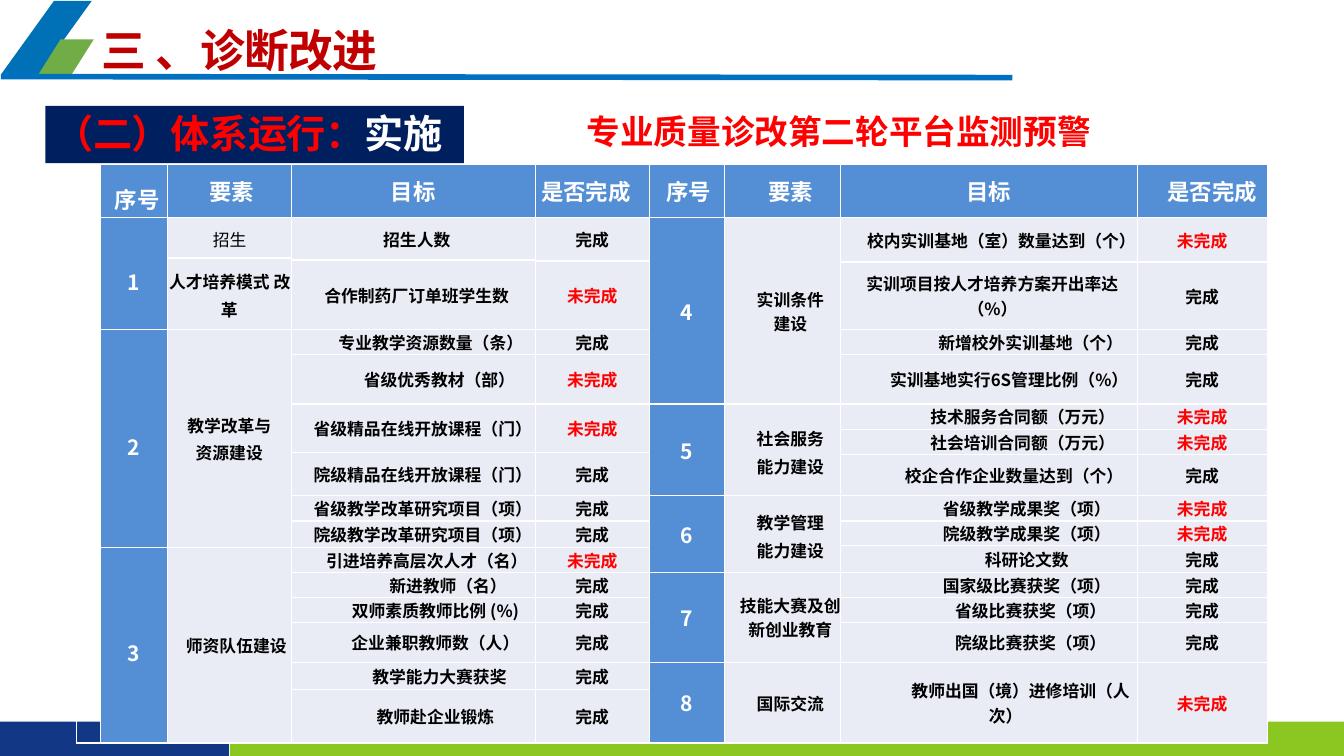
from dataclasses import dataclass

from lxml.etree import SubElement
from pptx import Presentation
from pptx.dml.color import RGBColor
from pptx.enum.shapes import MSO_CONNECTOR, MSO_SHAPE
from pptx.enum.text import MSO_ANCHOR, PP_ALIGN
from pptx.oxml.ns import qn
from pptx.util import Inches, Pt


@dataclass(frozen=True)
class Theme:
    """Colours, font and type sizes of the slide."""
    font: str = "Noto Sans CJK SC"
    white: str = "FFFFFF"
    black: str = "000000"
    red: str = "FF0000"
    title_red: str = "C00000"
    navy: str = "001F5F"
    logo_blue: str = "0071B7"
    logo_green: str = "70AD47"
    rule_blue: str = "0070C0"
    bar_green: str = "8CC721"
    bar_blue: str = "123885"
    head_fill: str = "548ED4"
    body_fill: str = "E9ECF4"
    title: int = 32
    section: int = 28
    subtitle: int = 24
    head: int = 16
    number: int = 15
    body: int = 12


THEME = Theme()
COLUMNS = [0.23, 0.66, 1.23, 2.42, 1.13, 0.75, 1.15, 2.94, 1.29]
ROWS = [0.53, 0.4, 0.02, 0.01, 0.01, 0.67, 0.25, 0.49, 0.25, 0.23, 0.02,
        0.41, 0.25, 0.24, 0.02, 0.25, 0.25, 0.24, 0.4, 0.27, 0.53]
HEADINGS = [("序号", dict(left=0.14, spacing=1.5)), ("要素", dict(left=0.42)),
            ("目标", dict(align=PP_ALIGN.CENTER)), ("是否完成", dict(left=0.06)),
            ("序号", dict(left=0.17)), ("要素", dict(left=0.43)),
            ("目标", dict(align=PP_ALIGN.CENTER)), ("是否完成", dict(left=0.3))]
HANGING = dict(left=0.48, first=-0.33, spacing=1.15)
LEFT_ELEMENTS = [
    (1, "招生", dict(first=0.01, spacing=1.15, bold=False)),
    (2, "人才培养模式 改革", dict(first=0.01, spacing=1.15)),
    (6, "教学改革与\n资源建设", dict(before=2.1)),
    (15, "师资队伍建设", dict(left=0.14)),
]
RIGHT_ELEMENTS = [
    (1, "实训条件\n建设", dict(left=0.15)),
    (8, "社会服务\n能力建设", HANGING),
    (12, "教学管理\n能力建设", HANGING),
    (16, "技能大赛及创新创业教育", dict(left=0.15)),
    (19, "国际交流", dict(left=0.15)),
]
LEFT_TARGETS = [
    (1, "招生人数", dict(left=0.07)),
    (3, "合作制药厂订单班学生数", dict(left=0.07)),
    (6, "专业教学资源数量（条）", dict(left=0.35)),
    (7, "省级优秀教材（部）", dict(left=0.52)),
    (8, "省级精品在线开放课程（门）", dict(left=0.19)),
    (10, "院级精品在线开放课程（门）", dict(left=0.19)),
    (12, "省级教学改革研究项目（项）", dict(left=0.19)),
    (13, "院级教学改革研究项目（项）", dict(left=0.19)),
    (15, "引进培养高层次人才（名）", dict(left=0.27)),
    (16, "新进教师（名）", dict(left=0.69)),
    (17, "双师素质教师比例 (%)", dict(left=0.44)),
    (18, "企业兼职教师数（人）", dict(left=0.44)),
    (19, "教学能力大赛获奖", dict(left=0.52)),
    (20, "教师赴企业锻炼", dict(left=0.44)),
]
RIGHT_TARGETS = [
    (1, "校内实训基地（室）数量达到（个）", dict(left=0.25)),
    (5, "实训项目按人才培养方案开出率达（%）", dict(left=0.07)),
    (6, "新增校外实训基地（个）", dict(left=0.83)),
    (7, "实训基地实行6S管理比例（%）", dict(left=0.4)),
    (8, "技术服务合同额（万元）", dict(left=0.67)),
    (9, "社会培训合同额（万元）", dict(left=0.67)),
    (11, "校企合作企业数量达到（个）", dict(left=0.5)),
    (12, "省级教学成果奖（项）", dict(left=0.75)),
    (13, "院级教学成果奖（项）", dict(left=0.75)),
    (14, "科研论文数", dict(left=0.75)),
    (16, "国家级比赛获奖（项）", dict(left=0.75)),
    (17, "省级比赛获奖（项）", dict(left=0.83)),
    (18, "院级比赛获奖（项）", dict(left=0.83)),
    (19, "教师出国（境）进修培训（人次）", dict(left=0.33, first=0.3)),
]
LEFT_STATUS_STARTS = [1, 4, 6, 7, 8, 10, 12, 13, 15, 16, 17, 18, 19, 20]
LEFT_UNFINISHED = {4, 7, 8, 15}
RIGHT_UNFINISHED = {1, 8, 9, 12, 13, 19}


def colour(value):
    """Turn a hex string into a colour."""
    return RGBColor.from_string(value)


def style_para(para, size, text_colour, bold=True, left=0, first=0, spacing=None,
               before=0, align=PP_ALIGN.LEFT, tracking=0):
    """Set indents, spacing and font of one paragraph."""
    properties = para._p.get_or_add_pPr()
    properties.set("marL", str(Inches(left)))
    properties.set("indent", str(Inches(first)))
    para.alignment = align
    if spacing:
        para.line_spacing = spacing
    if before:
        para.space_before = Pt(before)
    font = para.font
    font.size, font.bold, font.name = Pt(size), bold, THEME.font
    font.color.rgb = colour(text_colour)
    defaults = properties.find(qn("a:defRPr"))
    defaults.set("spc", str(round(tracking * 100)))
    SubElement(defaults, qn("a:ea"), typeface=THEME.font)


def add_block(page, preset, place, fill, adjustment=None):
    """Draw a plain filled preset shape."""
    block = page.shapes.add_shape(preset, *map(Inches, place))
    block.shadow.inherit = False
    block.fill.solid()
    block.fill.fore_color.rgb = colour(fill)
    block.line.fill.background()
    if adjustment:
        block.adjustments[0] = adjustment


def add_rule(page, start, end, line_colour, width):
    """Draw a straight line."""
    rule = page.shapes.add_connector(MSO_CONNECTOR.STRAIGHT, *map(Inches, start + end))
    rule.line.color.rgb = colour(line_colour)
    rule.line.width = Pt(width)
    SubElement(rule._element.spPr, qn("a:effectLst"))


def add_label(page, place, spans, size, tracking=0, inset=(0, 0), wrap=True,
              anchor=MSO_ANCHOR.TOP, indent=0.01):
    """Write one line of text made of (text, colour) spans."""
    frame = page.shapes.add_textbox(*map(Inches, place)).text_frame
    frame.word_wrap, frame.vertical_anchor = wrap, anchor
    frame.margin_left = frame.margin_right = Inches(inset[0])
    frame.margin_top = frame.margin_bottom = Inches(inset[1])
    para = frame.paragraphs[0]
    style_para(para, size, spans[0][1], left=indent, tracking=tracking)
    for text, span_colour in spans:
        span = para.add_run()
        span.text = text
        if span_colour != spans[0][1]:
            span.font.color.rgb = colour(span_colour)


def add_borders(cell):
    """Give a cell thin white borders."""
    properties = cell._tc.get_or_add_tcPr()
    for position, side in enumerate(("a:lnL", "a:lnR", "a:lnT", "a:lnB")):
        border = properties.makeelement(qn(side), {"w": str(Pt(1))})
        fill = SubElement(border, qn("a:solidFill"))
        SubElement(fill, qn("a:srgbClr"), val=THEME.white)
        properties.insert(position, border)


def fill_cell(cell, text, fill, size, text_colour, before=0, **style):
    """Write and colour one table cell."""
    cell.fill.solid()
    cell.fill.fore_color.rgb = colour(fill)
    cell.vertical_anchor = MSO_ANCHOR.MIDDLE
    cell.margin_left = cell.margin_right = cell.margin_top = cell.margin_bottom = 0
    cell.text_frame.text = text
    for index, para in enumerate(cell.text_frame.paragraphs):
        style_para(para, size, text_colour, before=before if index else 0, **style)


def fill_column(table, column, entries, fill=THEME.body_fill, size=THEME.body,
                text_colour=THEME.black):
    """Fill a column, each entry reaching down to the next one."""
    ends = [start for start, _, _ in entries[1:]] + [len(ROWS)]
    for (start, text, style), end in zip(entries, ends):
        cell = table.cell(start, column)
        if end - start > 1:
            cell.merge(table.cell(end - 1, column))
        options = dict(text_colour=text_colour, align=PP_ALIGN.CENTER) | style
        fill_cell(cell, text, fill, size, **options)


def add_half(table, column, first_number, number_starts, spacing, elements, targets,
             status_starts, unfinished):
    """Fill number, element, target and status columns of one half."""
    numbers = [(start, str(number), dict(spacing=spacing))
               for number, start in enumerate(number_starts, first_number)]
    statuses = [(start, "未完成", dict(text_colour=THEME.red)) if start in unfinished
                else (start, "完成", {}) for start in status_starts]
    fill_column(table, column, numbers, THEME.head_fill, THEME.number, THEME.white)
    for offset, entries in enumerate((elements, targets, statuses), 1):
        fill_column(table, column + offset, entries)


def add_monitor_table(page):
    """Build the monitoring table."""
    table = page.shapes.add_table(len(ROWS), len(COLUMNS), Inches(0.76), Inches(1.63),
                                  Inches(sum(COLUMNS)), Inches(sum(ROWS))).table
    table.first_row = table.horz_banding = False
    for column, width in zip(table.columns, COLUMNS):
        column.width = Inches(width)
    for row, height in zip(table.rows, ROWS):
        row.height = Inches(height)
    for cell in table.iter_cells():
        cell.fill.background()
        add_borders(cell)
    table.cell(0, 0).merge(table.cell(len(ROWS) - 1, 0))
    for column, (text, style) in enumerate(HEADINGS, 1):
        fill_cell(table.cell(0, column), text, THEME.head_fill, THEME.head, THEME.white, **style)
    add_half(table, 1, 1, [1, 6, 15], 1.5, LEFT_ELEMENTS, LEFT_TARGETS,
             LEFT_STATUS_STARTS, LEFT_UNFINISHED)
    add_half(table, 5, 4, [1, 8, 12, 16, 19], None, RIGHT_ELEMENTS, RIGHT_TARGETS,
             [start for start, _, _ in RIGHT_TARGETS], RIGHT_UNFINISHED)


def main():
    """Build and save the slide."""
    deck = Presentation()
    deck.slide_width, deck.slide_height = Inches(13.33), Inches(7.5)
    page = deck.slides.add_slide(deck.slide_layouts[6])
    add_block(page, MSO_SHAPE.PARALLELOGRAM, (0.01, 0.01, 0.9, 0.73), THEME.logo_blue, 0.72)
    add_block(page, MSO_SHAPE.PARALLELOGRAM, (0.38, 0.39, 0.55, 0.35), THEME.logo_green, 0.63)
    add_block(page, MSO_SHAPE.RECTANGLE, (2.28, 7.16, 11.05, 0.34), THEME.bar_green)
    add_block(page, MSO_SHAPE.RECTANGLE, (0, 7.16, 2.27, 0.34), THEME.bar_blue)
    add_rule(page, (0.01, 0.76), (10.04, 0.77), THEME.rule_blue, 4)
    add_monitor_table(page)
    add_label(page, (5.7, 1.05, 5.22, 0.5), [("专业质量诊改第二轮平台监测预警", THEME.red)],
              THEME.subtitle, inset=(0.1, 0.05), wrap=False, indent=0.02)
    add_block(page, MSO_SHAPE.RECTANGLE, (0.45, 1.05, 4.15, 0.57), THEME.navy)
    add_label(page, (0.53, 1.08, 3.98, 0.48),
              [("（二）体系运行：", THEME.red), ("实施", THEME.white)], THEME.section, tracking=-0.3)
    add_label(page, (1, 0.11, 3.2, 0.65), [("三 、诊断改进", THEME.title_red)],
              THEME.title, tracking=-0.4, anchor=MSO_ANCHOR.BOTTOM)
    deck.save("out.pptx")


if __name__ == "__main__":
    main()
